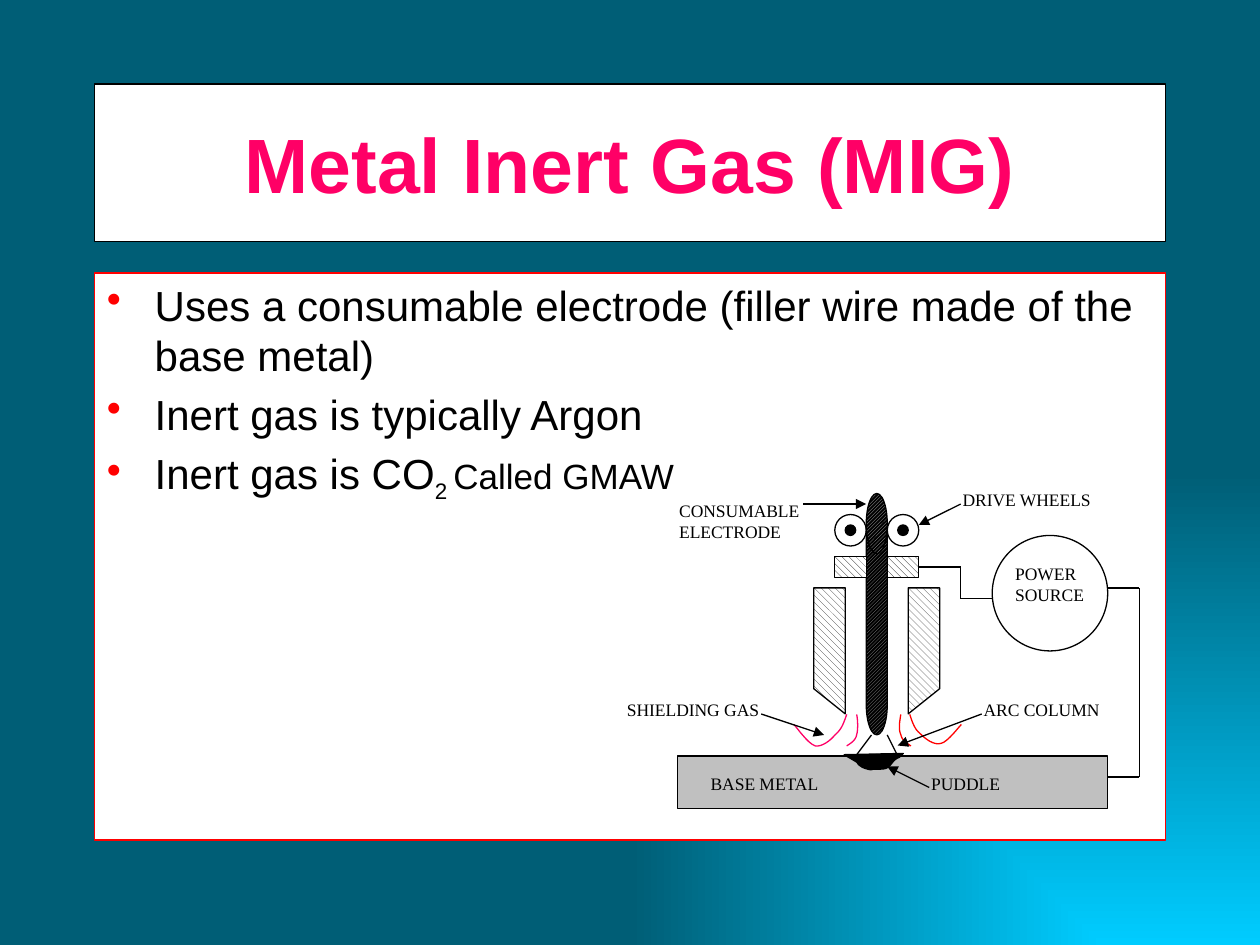
from lxml.etree import SubElement
from pptx import Presentation
from pptx.dml.color import RGBColor
from pptx.enum.dml import MSO_PATTERN
from pptx.enum.shapes import MSO_CONNECTOR, MSO_SHAPE
from pptx.enum.text import MSO_ANCHOR, PP_ALIGN
from pptx.oxml import parse_xml
from pptx.oxml.ns import nsdecls, qn
from pptx.util import Inches, Pt

CELL = Inches(1) // 12  # the slide is a grid of 120 columns by 90 rows
BLACK, WHITE, RED, PINK = "000000", "FFFFFF", "FF0000", "FF0066"


def hue(code):
    return RGBColor.from_string(code)


def dress(shape, fill=None, edge=BLACK):
    """Fill is None, a colour, or (pattern, front, back)."""
    shape.shadow.inherit = False
    shape.line.color.rgb = hue(edge)
    shape.line.width = Pt(0.75)
    if fill is None:
        shape.fill.background()
    elif isinstance(fill, str):
        shape.fill.solid()
        shape.fill.fore_color.rgb = hue(fill)
    else:
        shape.fill.patterned()
        shape.fill.pattern = fill[0]
        shape.fill.fore_color.rgb = hue(fill[1])
        shape.fill.back_color.rgb = hue(fill[2])


deck = Presentation()
deck.slide_width, deck.slide_height = 120 * CELL, 90 * CELL
slide = deck.slides.add_slide(deck.slide_layouts[6])
shapes = slide.shapes

# Background: glow from the lower right corner
back = slide.background.fill
back.gradient()
for stop, code in zip(back.gradient_stops, ("00CCFF", "005E76")):
    stop.color.rgb = hue(code)
lin = slide._element.xpath(".//p:bg//a:lin")[0]
lin.getparent().replace(lin, parse_xml(
    f'<a:path {nsdecls("a")} path="rect"><a:fillToRect l="100000" t="100000"/></a:path>'))

# Bullet panel
body = shapes.add_shape(MSO_SHAPE.RECTANGLE, 9 * CELL, 26 * CELL, 102 * CELL, 54 * CELL)
dress(body, WHITE, RED)
frame = body.text_frame
frame.word_wrap = True
frame.vertical_anchor = MSO_ANCHOR.TOP
points = [
    [("Uses a consumable electrode (filler wire made of the base metal)", 24, 0)],
    [("Inert gas is typically Argon", 24, 0)],
    [("Inert gas is CO", 24, 0), ("2 ", 22, -25000), ("Called GMAW", 20, 0)],
]
for i, runs in enumerate(points):
    para = frame.add_paragraph() if i else frame.paragraphs[0]
    para.alignment = PP_ALIGN.LEFT
    para.space_before = Pt(5)
    para.font.name = "Arial"
    para.font.color.rgb = hue(BLACK)
    props = para._p.get_or_add_pPr()
    props.set("marL", str(Inches(0.38)))
    props.set("indent", str(-Inches(0.38)))
    tint = parse_xml(f'<a:buClr {nsdecls("a")}><a:srgbClr val="{RED}"/></a:buClr>')
    mark = parse_xml(f'<a:buChar {nsdecls("a")} char="•"/>')
    props.find(qn("a:spcBef")).addnext(tint)
    tint.addnext(mark)
    for text, size, shift in runs:
        run = para.add_run()
        run.text = text
        run.font.size = Pt(size)
        run.font.name = "Arial"
        run.font.color.rgb = hue(BLACK)
        if shift:
            run._r.get_or_add_rPr().set("baseline", str(shift))

# Title
title = shapes.add_shape(MSO_SHAPE.RECTANGLE, 9 * CELL, 8 * CELL, 102 * CELL, 15 * CELL)
dress(title, WHITE)
title.text_frame.text = "Metal Inert Gas (MIG)"
para = title.text_frame.paragraphs[0]
para.alignment = PP_ALIGN.CENTER
para.font.name, para.font.size, para.font.bold = "Arial", Pt(44), True
para.font.color.rgb = hue(PINK)

# Torch parts: kind, column, row, columns, rows, fill, flips
wide = MSO_PATTERN.WIDE_DOWNWARD_DIAGONAL
cup = (wide, "333333", WHITE)
clamp = (wide, BLACK, WHITE)
wire = (MSO_PATTERN.DARK_UPWARD_DIAGONAL, "969696", BLACK)
parts = [
    (MSO_SHAPE.RECTANGLE, 64.5, 72, 41, 5, "C0C0C0", ""),
    (MSO_SHAPE.FLOWCHART_MANUAL_INPUT, 77.5, 56, 3, 12, cup, "V"),
    (MSO_SHAPE.FLOWCHART_MANUAL_INPUT, 86.5, 56, 3, 12, cup, "HV"),
    (MSO_SHAPE.CAN, 82.5, 47, 2, 23, wire, ""),
    (MSO_SHAPE.OVAL, 94.5, 51, 11, 11, None, ""),
]
for col in (79.5, 84.5):
    parts += [
        (MSO_SHAPE.RECTANGLE, col, 53, 3, 2, clamp, ""),
        (MSO_SHAPE.OVAL, col, 49, 3, 3, None, ""),
        (MSO_SHAPE.OVAL, col + 1, 50, 1, 1, BLACK, ""),
    ]
for kind, *place, fill, flips in parts:
    part = shapes.add_shape(kind, *(int(n * CELL) for n in place))
    dress(part, fill)
    if kind == MSO_SHAPE.CAN:
        part.adjustments[0] = 2.875
    for way in flips:
        part._element.spPr.xfrm.set("flip" + way, "1")

# Gas flow and puddle: Bezier chains in inches, drawn in short steps
curves = [
    (PINK, None, [(6.72, 5.67), (6.7, 5.73), (6.68, 5.79), (6.63, 5.83), (6.59, 5.88),
                  (6.52, 5.93), (6.47, 5.92), (6.41, 5.9), (6.33, 5.78), (6.3, 5.75)]),
    (RED, None, [(7.22, 5.67), (7.24, 5.73), (7.26, 5.79), (7.3, 5.82), (7.34, 5.86),
                 (7.41, 5.92), (7.47, 5.9), (7.52, 5.89), (7.61, 5.77), (7.63, 5.75)]),
    (PINK, None, [(6.8, 5.67), (6.81, 5.73), (6.81, 5.79), (6.8, 5.83),
                  (6.79, 5.88), (6.75, 5.9), (6.72, 5.92)]),
    (RED, None, [(7.15, 5.67), (7.14, 5.73), (7.13, 5.79), (7.15, 5.83),
                 (7.16, 5.88), (7.2, 5.9), (7.23, 5.92)]),
    (BLACK, BLACK, [(6.7, 5.99), (6.73, 6.01), (6.77, 6.03), (6.8, 6.05), (6.81, 6.06),
                    (6.81, 6.07), (6.83, 6.08), (6.85, 6.1), (6.91, 6.11), (6.91, 6.11),
                    (6.95, 6.1), (6.99, 6.11), (7.03, 6.1), (7.08, 6.08), (7.08, 6.03),
                    (7.14, 6.01), (7.15, 6), (7.17, 5.98), (7.17, 5.98)]),
]
for edge, fill, knots in curves:
    dots = []
    for i in range(0, len(knots) - 1, 3):
        for t in (n / 8 for n in range(1, 9)):
            mix = ((1 - t) ** 3, 3 * t * (1 - t) ** 2, 3 * t * t * (1 - t), t ** 3)
            dots.append([Inches(sum(m * k[axis] for m, k in zip(mix, knots[i:i + 4])))
                         for axis in (0, 1)])
    pen = shapes.build_freeform(*(Inches(n) for n in knots[0]))
    pen.add_line_segments(dots, close=fill is not None)
    dress(pen.convert_to_shape(), fill, edge)

# Wires, arc edges and pointers
wires = [
    [(105.5, 56), (108.5, 56), (108.5, 74), (105.5, 74)],
    [(94.5, 57), (91.5, 57), (91.5, 54), (87.5, 54)],
    [(83, 70), (81.5, 72)],
    [(84.5, 70), (85.5, 72)],
]
arrows = [
    [(76.5, 48), (82.5, 48)],
    [(91.5, 48), (87.5, 50)],
    [(93.5, 68), (85.5, 71)],
    [(72.5, 68), (78.5, 70)],
    [(88.5, 75), (84.5, 73)],
]
for chain in wires + arrows:
    for start, end in zip(chain, chain[1:]):
        line = shapes.add_connector(MSO_CONNECTOR.STRAIGHT,
                                    *(int(n * CELL) for n in start + end))
        line.line.color.rgb = hue(BLACK)
        line.line.width = Pt(0.75)
        if chain in arrows:
            SubElement(line.line._get_or_add_ln(), qn("a:tailEnd"), type="triangle")
        SubElement(line._element.spPr, qn("a:effectLst"))

# Labels: text, column, row, columns, rows
labels = [
    ("BASE METAL", 66.5, 73, 18, 3.2),
    ("PUDDLE", 87.5, 73, 14, 3.2),
    ("POWER SOURCE", 95.5, 53, 9, 5.2),
    ("DRIVE WHEELS", 90.5, 46, 18, 3.2),
    ("CONSUMABLE ELECTRODE", 63.5, 47, 14, 5.2),
    ("ARC COLUMN", 92.5, 66, 14, 3.2),
    ("SHIELDING GAS", 56.5, 66, 19, 3.2),
]
for text, *place in labels:
    label = shapes.add_textbox(*(int(n * CELL) for n in place))
    label.text_frame.word_wrap = True
    label.text_frame.text = text
    para = label.text_frame.paragraphs[0]
    para.font.name, para.font.size = "Times New Roman", Pt(10)
    para.font.color.rgb = hue(BLACK)
    if text == "SHIELDING GAS":
        para.alignment = PP_ALIGN.CENTER

deck.save("out.pptx")
